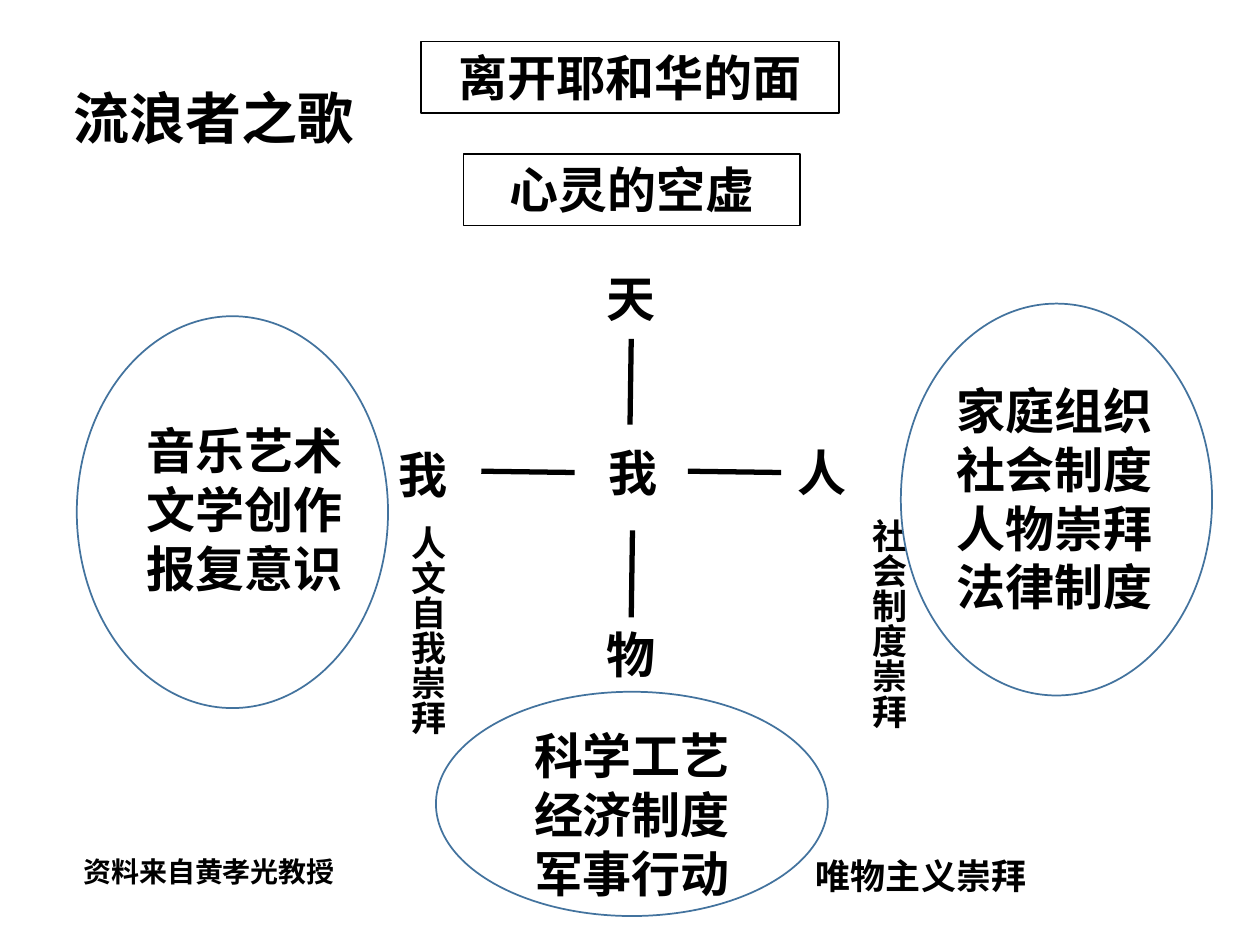
from pptx import Presentation
from pptx.dml.color import RGBColor
from pptx.enum.shapes import MSO_CONNECTOR, MSO_SHAPE
from pptx.enum.text import MSO_ANCHOR, PP_ALIGN
from pptx.oxml.ns import qn
from pptx.util import Inches, Pt
from lxml import etree

BLACK = RGBColor(0x00, 0x00, 0x00)
WHITE = RGBColor(0xFF, 0xFF, 0xFF)
BLUE = RGBColor(0x43, 0x73, 0x9E)
CENTER = PP_ALIGN.CENTER
TOP = MSO_ANCHOR.TOP
RECTANGLE, OVAL = MSO_SHAPE.RECTANGLE, MSO_SHAPE.OVAL
STRAIGHT = MSO_CONNECTOR.STRAIGHT
TITLE_ONLY = 5

presentation = Presentation()
presentation.slide_width = Inches(10)
presentation.slide_height = Inches(7.5)
slide = presentation.slides.add_slide(presentation.slide_layouts[TITLE_ONLY])

# The slide is a grid of 100 columns by 75 rows.
COLUMN = presentation.slide_width / 100
ROW = presentation.slide_height / 75


def grid(left, top, width, height):
    """Turn grid columns and rows into slide lengths."""
    return [round(n * unit) for n, unit in
            zip((left, top, width, height), (COLUMN, ROW, COLUMN, ROW))]


def write(text, place, shape=None, size=28, font="Calibri", vertical=False):
    """Write centred bold lines in a shape, or in a new text box."""
    if shape is None:
        shape = slide.shapes.add_textbox(*grid(*place))
    else:
        shape.left, shape.top, shape.width, shape.height = grid(*place)
    frame = shape.text_frame
    frame.word_wrap = True
    frame.vertical_anchor = TOP
    if vertical:
        frame._txBody.bodyPr.set("vert", "eaVert")
    frame.text = text
    for paragraph in frame.paragraphs:
        paragraph.alignment = CENTER
        paragraph.font.size = Pt(size)
        paragraph.font.name = font
        paragraph.font.bold = True
        paragraph.font.color.rgb = BLACK


write("流浪者之歌", (3.6, 6.1, 26.7, 6.4), shape=slide.shapes.title, size=32)

# Framed headings
for text, place in (
    ("离开耶和华的面", (33.4, 3.3, 33.2, 5.7)),
    ("心灵的空虚", (36.8, 12.2, 26.7, 5.7)),
):
    box = slide.shapes.add_shape(RECTANGLE, *grid(*place))
    box.shadow.inherit = False
    box.fill.background()
    box.line.color.rgb = BLACK
    box.line.width = Pt(1)
    write(text, place, shape=box)

# Cross of relations around the self
for text, center, top in (
    ("我", 50.2, 34.6),
    ("天", 50.1, 20.8),
    ("人", 65.25, 34.6),
    ("物", 50.05, 49.1),
    ("我", 33.6, 34.8),
):
    write(text, (center - 4, top, 8, 5.7))

for ends in (
    (50.1, 26.9, 50, 33.7),
    (54.6, 37.4, 62, 37.5),
    (38.2, 37.4, 45.6, 37.5),
    (50.2, 42.1, 50.1, 49),
):
    connector = slide.shapes.add_connector(STRAIGHT, *grid(*ends))
    connector.line.color.rgb = BLACK
    connector.line.width = Pt(3)
    etree.SubElement(connector._element.spPr, qn("a:effectLst"))

# Kinds of worship
write("社会制度崇拜", (67.3, 40.2, 5.4, 18.9), size=20, vertical=True)
write("人文自我崇拜", (30.7, 40.7, 5.4, 18.9), size=20, vertical=True)
write("唯物主义崇拜", (62.2, 67.3, 21.8, 4.4), size=20)

# Ovals with the results of each relation
for lines, oval_place, text_place in (
    (("科学工艺", "经济制度", "军事行动"),
     (34.6, 54.9, 31.1, 17.8), (41.3, 57.1, 17.7, 15.1)),
    (("音乐艺术", "文学创作", "报复意识"),
     (6.1, 25.1, 24.7, 31.1), (9.2, 32.9, 20.4, 15.1)),
    (("家庭组织", "社会制度", "人物崇拜", "法律制度"),
     (71.5, 24.1, 24.7, 31.1), (73.8, 29.7, 19.8, 19.9)),
):
    oval = slide.shapes.add_shape(OVAL, *grid(*oval_place))
    oval.shadow.inherit = False
    oval.fill.solid()
    oval.fill.fore_color.rgb = WHITE
    oval.line.color.rgb = BLUE
    oval.line.width = Pt(1)
    write("\n".join(lines), text_place, font="Arial")

write("资料来自黄孝光教授", (3.6, 67.3, 26, 3.7), size=16)

presentation.save("out.pptx")
